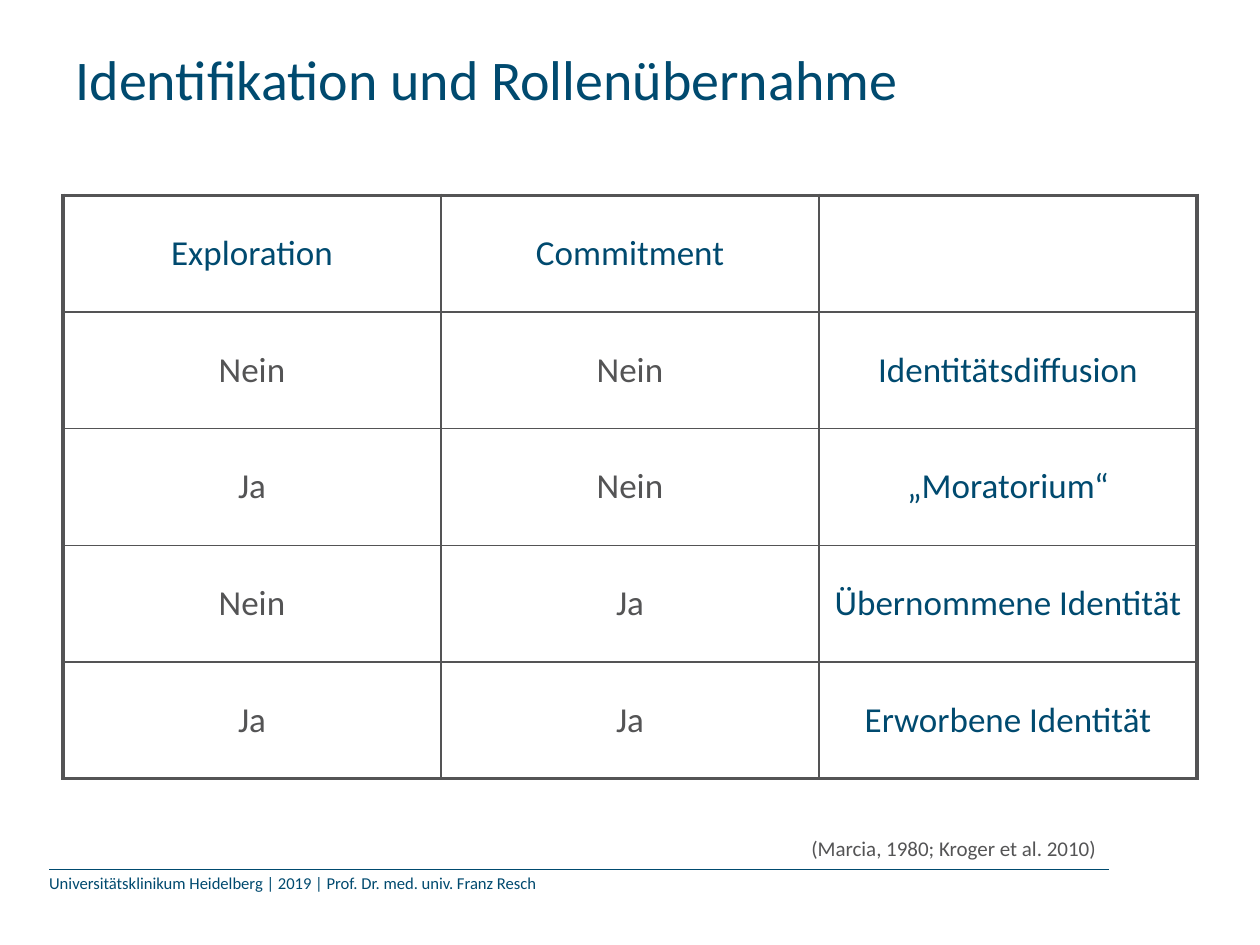
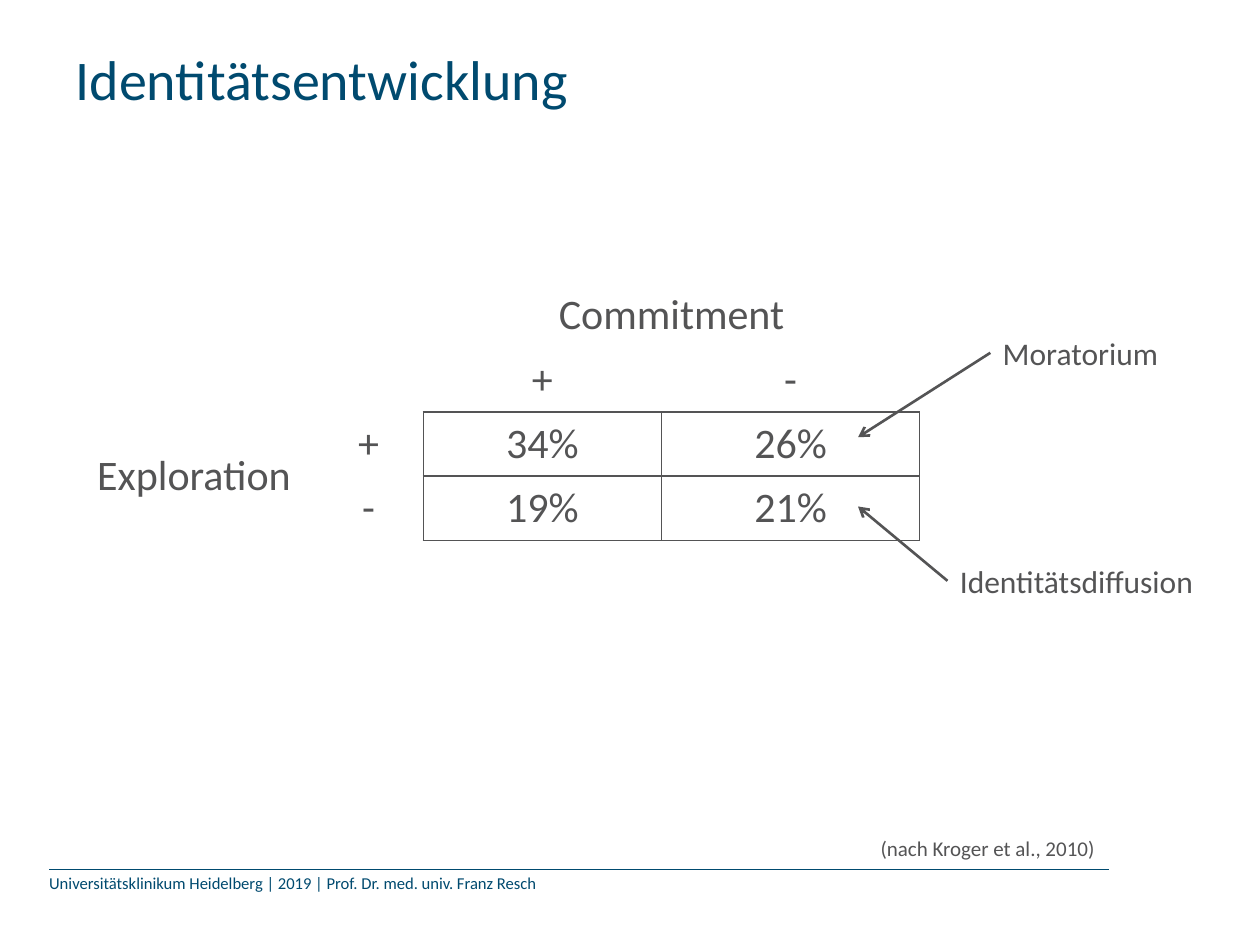
from lxml import etree
from pptx import Presentation
from pptx.dml.color import RGBColor
from pptx.enum.shapes import MSO_CONNECTOR
from pptx.enum.text import MSO_ANCHOR, MSO_AUTO_SIZE, PP_ALIGN
from pptx.oxml.ns import qn
from pptx.util import Inches, Pt

BLUE = RGBColor(0x00, 0x4A, 0x6F)
GREY = RGBColor(0x54, 0x54, 0x55)
FONT = "Calibri"
LEFT, CENTER = PP_ALIGN.LEFT, PP_ALIGN.CENTER
TOP, MIDDLE = MSO_ANCHOR.TOP, MSO_ANCHOR.MIDDLE
STRAIGHT = MSO_CONNECTOR.STRAIGHT
TITLE_ONLY = 5

FOOTER = "Universitätsklinikum Heidelberg | 2019 | Prof. Dr. med. univ. Franz Resch"

STATUS_TITLE = "Identifikation und Rollenübernahme"
STATUS_SOURCE = "(Marcia, 1980; Kroger et al. 2010)"
STATUS_ROWS = [
    ("Exploration", "Commitment", ""),
    ("Nein", "Nein", "Identitätsdiffusion"),
    ("Ja", "Nein", "„Moratorium“"),
    ("Nein", "Ja", "Übernommene Identität"),
    ("Ja", "Ja", "Erworbene Identität"),
]

SHARES_TITLE = "Identitätsentwicklung"
SHARES_SOURCE = "(nach Kroger et al., 2010)"
SHARES_ROWS = [
    ("", "", "Commitment", ""),
    ("", "", "+", "-"),
    ("Exploration", "+", "34%", "26%"),
    ("", "-", "19%", "21%"),
]
SHARES_MERGES = [((0, 2), (0, 3)), ((2, 0), (3, 0))]
# label, left, top, width, arrow tip
CALLOUTS = [
    ("Moratorium", 7.86, 2.6, 1.48, (6.81, 3.47)),
    ("Identitätsdiffusion", 7.52, 4.41, 2.16, (6.81, 4.02)),
]

# Step (row, column) to the neighbour across each cell edge
EDGES = {"L": (0, -1), "R": (0, 1), "T": (-1, 0), "B": (1, 0)}


def write(frame, text, size, color=GREY, align=LEFT):
    paragraph = frame.paragraphs[0]
    paragraph.alignment = align
    font = paragraph.font
    font.name, font.size, font.bold = FONT, Pt(size), False
    font.color.rgb = color
    if text:
        paragraph.add_run().text = text


def add_label(slide, text, left, top, width, height, wrap=False, inset=True, **style):
    frame = slide.shapes.add_textbox(*map(Inches, (left, top, width, height))).text_frame
    frame.word_wrap = wrap
    if not inset:
        frame.margin_left = frame.margin_top = frame.margin_right = frame.margin_bottom = 0
    write(frame, text, **style)


def add_line(slide, start, end, color, weight, arrow=False):
    line = slide.shapes.add_connector(STRAIGHT, *map(Inches, (*start, *end)))
    line.line.color.rgb = color
    line.line.width = Pt(weight)
    if arrow:
        etree.SubElement(line.line._get_or_add_ln(), qn("a:tailEnd"), type="arrow")
    etree.SubElement(line._element.spPr, qn("a:effectLst"))


def set_borders(cell, weights):
    """Draw each edge at its weight in points; 0 leaves the edge blank."""
    properties = cell._tc.get_or_add_tcPr()
    for edge, weight in weights.items():
        border = etree.SubElement(properties, qn(f"a:ln{edge}"), w=str(Pt(weight)))
        if weight:
            fill = etree.SubElement(border, qn("a:solidFill"))
            etree.SubElement(fill, qn("a:srgbClr"), val=str(GREY))
        else:
            etree.SubElement(border, qn("a:noFill"))


def add_grid(slide, rows, left, top, widths, row_height, size, edge_weight,
             cell_color, inset=True):
    """edge_weight takes a cell and its neighbour, each as (row, column)."""
    table = slide.shapes.add_table(
        len(rows), len(widths), Inches(left), Inches(top),
        Inches(sum(widths)), Inches(row_height * len(rows))).table
    table.first_row = table.horz_banding = False
    for column, width in zip(table.columns, widths):
        column.width = Inches(width)
    for r, row in enumerate(rows):
        table.rows[r].height = Inches(row_height)
        for c, text in enumerate(row):
            cell = table.cell(r, c)
            set_borders(cell, {edge: edge_weight((r, c), (r + down, c + right))
                               for edge, (down, right) in EDGES.items()})
            cell.fill.background()
            cell.vertical_anchor = MIDDLE
            if not inset:
                cell.margin_left = cell.margin_right = 0
                cell.margin_top = cell.margin_bottom = 0
            write(cell.text_frame, text, size, cell_color(r, c), CENTER)
    return table


def add_base_slide(deck, title, source, source_left, source_width):
    slide = deck.slides.add_slide(deck.slide_layouts[TITLE_ONLY])
    heading = slide.shapes.title
    heading.left, heading.top, heading.width, heading.height = map(
        Inches, (0.5, 0.3, 9, 1.25))
    heading.text_frame.auto_size = MSO_AUTO_SIZE.NONE
    heading.text_frame.vertical_anchor = TOP
    write(heading.text_frame, title, size=32, color=BLUE)
    add_line(slide, (0.39, 6.9), (8.8, 6.9), BLUE, 0.75)
    add_label(slide, FOOTER, 0.39, 6.93, 7.87, 0.16, wrap=True, inset=False,
              size=9.5, color=BLUE)
    add_label(slide, source, source_left, 6.58, source_width, 0.3, size=12)
    return slide


def build_status_slide(deck):
    slide = add_base_slide(deck, STATUS_TITLE, STATUS_SOURCE, 6.34, 2.49)

    def edge_weight(cell, neighbour):
        row, column = neighbour
        inside = 0 <= row < len(STATUS_ROWS) and 0 <= column < 3
        return 1 if inside else 2.25

    def cell_color(row, column):
        return BLUE if row == 0 or column == 2 else GREY

    add_grid(slide, STATUS_ROWS, 0.5, 1.55, [3, 3, 3], 4.63 / len(STATUS_ROWS), 20,
             edge_weight, cell_color, inset=False)


def build_shares_slide(deck):
    slide = add_base_slide(deck, SHARES_TITLE, SHARES_SOURCE, 6.89, 1.92)

    def is_share(cell):
        return all(2 <= index <= 3 for index in cell)

    def edge_weight(cell, neighbour):
        return 1 if is_share(cell) or is_share(neighbour) else 0

    table = add_grid(slide, SHARES_ROWS, 0.59, 2.25, [1.9, 0.87, 1.89, 2.05], 0.51, 24,
                     edge_weight, lambda row, column: GREY)
    for first, last in SHARES_MERGES:
        table.cell(*first).merge(table.cell(*last))

    for label, left, top, width, tip in CALLOUTS:
        add_label(slide, label, left, top, width, 0.4, size=18)
        add_line(slide, (left, top + 0.2), tip, GREY, 1.5, arrow=True)


def main():
    deck = Presentation()
    deck.slide_width, deck.slide_height = Inches(10), Inches(7.5)
    build_status_slide(deck)
    build_shares_slide(deck)
    deck.save("out.pptx")


if __name__ == "__main__":
    main()
